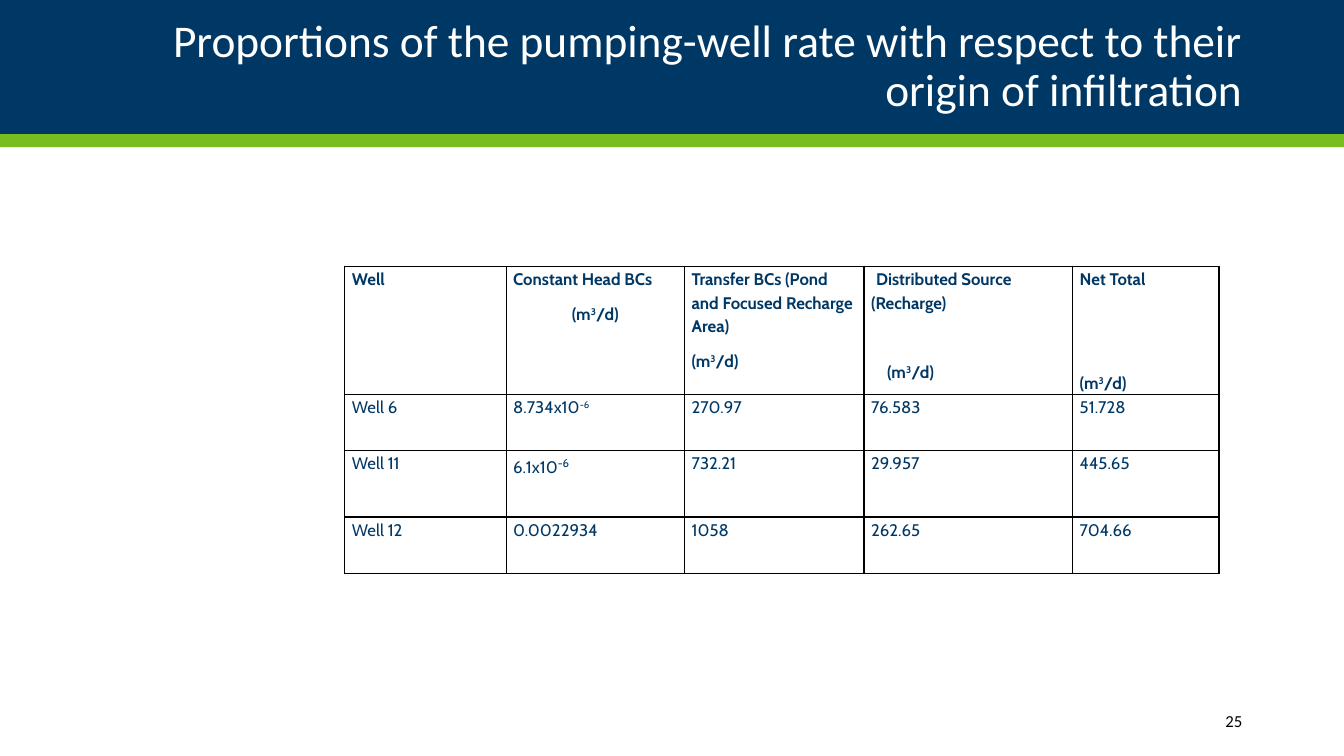
import pptx
import pptx.util
import pptx.dml.color
import pptx.enum.shapes
import pptx.enum.text
import pptx.oxml
from dataclasses import dataclass
from pptx.oxml.ns import qn

TITLE = "Proportions of the pumping-well rate with respect to their origin of infiltration"
PAGE = "25"
UNIT = "(m^3^/d)"  # text between carets is raised
HEADERS = ["Well", "Constant Head BCs", "Transfer BCs (Pond and Focused Recharge Area)",
           "Distributed Source (Recharge)", "Net Total"]
WELLS = [
    ["Well 6", "8.734x10^-6^", "270.97", "76.583", "51.728"],
    ["Well 11", "6.1x10^-6^", "732.21", "29.957", "445.65"],
    ["Well 12", "0.0022934", "1058", "262.65", "704.66"],
]
# column: (lines skipped above the unit, unit indent, first-line indent of the header)
UNIT_LAYOUT = {1: (0, 0, 0), 2: (0, 0, 0), 3: (1, 0.16, 0.05), 4: (2, 0, 0)}
CENTRED_UNIT = 1
LARGE_POWER = (2, 1)

COLUMNS = [1.6, 1.77, 1.78, 2.07, 1.45]
ROWS = [1.27, 0.56, 0.66, 0.56]
WIDTH, HEIGHT = 13.33, 7.5


@dataclass(frozen=True)
class Theme:
    navy: str = "003865"
    green: str = "78BE21"
    white: str = "FFFFFF"
    black: str = "000000"
    heading_font: str = "Calibri"
    table_font: str = "Cabin"
    title: float = 32.4
    body: float = 12
    power: float = 14
    line_pitch: float = 24.7


THEME = Theme()
Inches, Pt = pptx.util.Inches, pptx.util.Pt
ALIGN = pptx.enum.text.PP_ALIGN
MIDDLE = pptx.enum.text.MSO_ANCHOR.MIDDLE


def rgb(code):
    return pptx.dml.color.RGBColor.from_string(code)


def add_run(paragraph, text, font, size, color, bold=False, raised=False):
    run = paragraph.add_run()
    run.text = text
    run.font.name, run.font.size, run.font.bold = font, Pt(size), bold
    run.font.color.rgb = rgb(color)
    if raised:
        run._r.get_or_add_rPr().set("baseline", "30000")


def write_cell_line(paragraph, text, bold=False, power_size=THEME.body):
    paragraph.line_spacing = 1.15
    paragraph.space_after = Pt(8)
    for index, part in enumerate(text.split("^")):
        raised = index % 2 == 1
        if part:
            add_run(paragraph, part, THEME.table_font, power_size if raised else THEME.body,
                    THEME.navy, bold, raised)


def indent(paragraph, left=0, first=0):
    properties = paragraph._p.get_or_add_pPr()
    properties.set("marL", str(Inches(left)))
    properties.set("indent", str(Inches(first)))


def outline(cell):
    properties = cell._tc.get_or_add_tcPr()
    for side in ("lnL", "lnR", "lnT", "lnB"):
        border = properties.makeelement(qn(f"a:{side}"), {"w": str(Pt(1))})
        fill = border.makeelement(qn("a:solidFill"), {})
        fill.append(fill.makeelement(qn("a:srgbClr"), {"val": THEME.black}))
        border.append(fill)
        properties.append(border)
    cell.fill.background()


def add_bands(slide):
    """Draw the header bands behind the title."""
    bands = [(0, 1.33, THEME.navy), (1.33, 0.13, THEME.green)]
    for order, (top, height, color) in enumerate(bands):
        band = slide.shapes.add_shape(pptx.enum.shapes.MSO_SHAPE.RECTANGLE, 0, Inches(top),
                                      Inches(WIDTH), Inches(height))
        band.shadow.inherit = False
        band.fill.solid()
        band.fill.fore_color.rgb = rgb(color)
        band.line.fill.background()
        slide.shapes._spTree.insert(2 + order, band._element)


def add_title(slide):
    title = slide.shapes.title
    title.left, title.top = Inches(0.92), Inches(0.17)
    title.width, title.height = Inches(11.5), Inches(1)
    frame = title.text_frame
    frame.word_wrap = True
    frame.auto_size = pptx.enum.text.MSO_AUTO_SIZE.NONE
    frame.vertical_anchor = MIDDLE
    heading = frame.paragraphs[0]
    heading.alignment, heading.line_spacing = ALIGN.RIGHT, 0.9
    add_run(heading, TITLE, THEME.heading_font, THEME.title, THEME.white)


def add_well_table(slide):
    table = slide.shapes.add_table(len(ROWS), len(COLUMNS), Inches(3.42), Inches(2.64),
                                   Inches(sum(COLUMNS)), Inches(sum(ROWS))).table
    table.first_row = table.horz_banding = False
    for column, width in zip(table.columns, COLUMNS):
        column.width = Inches(width)
    for row, height in zip(table.rows, ROWS):
        row.height = Inches(height)
    for r, texts in enumerate([HEADERS] + WELLS):
        for c, text in enumerate(texts):
            cell = table.cell(r, c)
            cell.margin_left = cell.margin_right = Inches(0.07)
            cell.margin_top = cell.margin_bottom = 0
            outline(cell)
            power_size = THEME.power if (r, c) == LARGE_POWER else THEME.body
            label = cell.text_frame.paragraphs[0]
            write_cell_line(label, text, r == 0, power_size)
            if r == 0 and c in UNIT_LAYOUT:
                skipped, unit_indent, first_indent = UNIT_LAYOUT[c]
                indent(label, first=first_indent)
                unit = cell.text_frame.add_paragraph()
                indent(unit, left=unit_indent)
                unit.space_before = Pt(skipped * THEME.line_pitch)
                unit.alignment = ALIGN.CENTER if c == CENTRED_UNIT else ALIGN.LEFT
                write_cell_line(unit, UNIT, bold=True)


def add_page_number(slide):
    frame = slide.shapes.add_textbox(Inches(10.82), Inches(6.95), Inches(1.6),
                                     Inches(0.4)).text_frame
    frame.word_wrap = True
    frame.vertical_anchor = MIDDLE
    number = frame.paragraphs[0]
    number.alignment = ALIGN.RIGHT
    add_run(number, PAGE, THEME.heading_font, THEME.body, THEME.black)


def main():
    deck = pptx.Presentation()
    deck.slide_width, deck.slide_height = Inches(WIDTH), Inches(HEIGHT)
    slide = deck.slides.add_slide(deck.slide_layouts.get_by_name("Title Only"))
    add_bands(slide)
    add_title(slide)
    add_well_table(slide)
    add_page_number(slide)
    deck.save("out.pptx")


if __name__ == "__main__":
    main()
